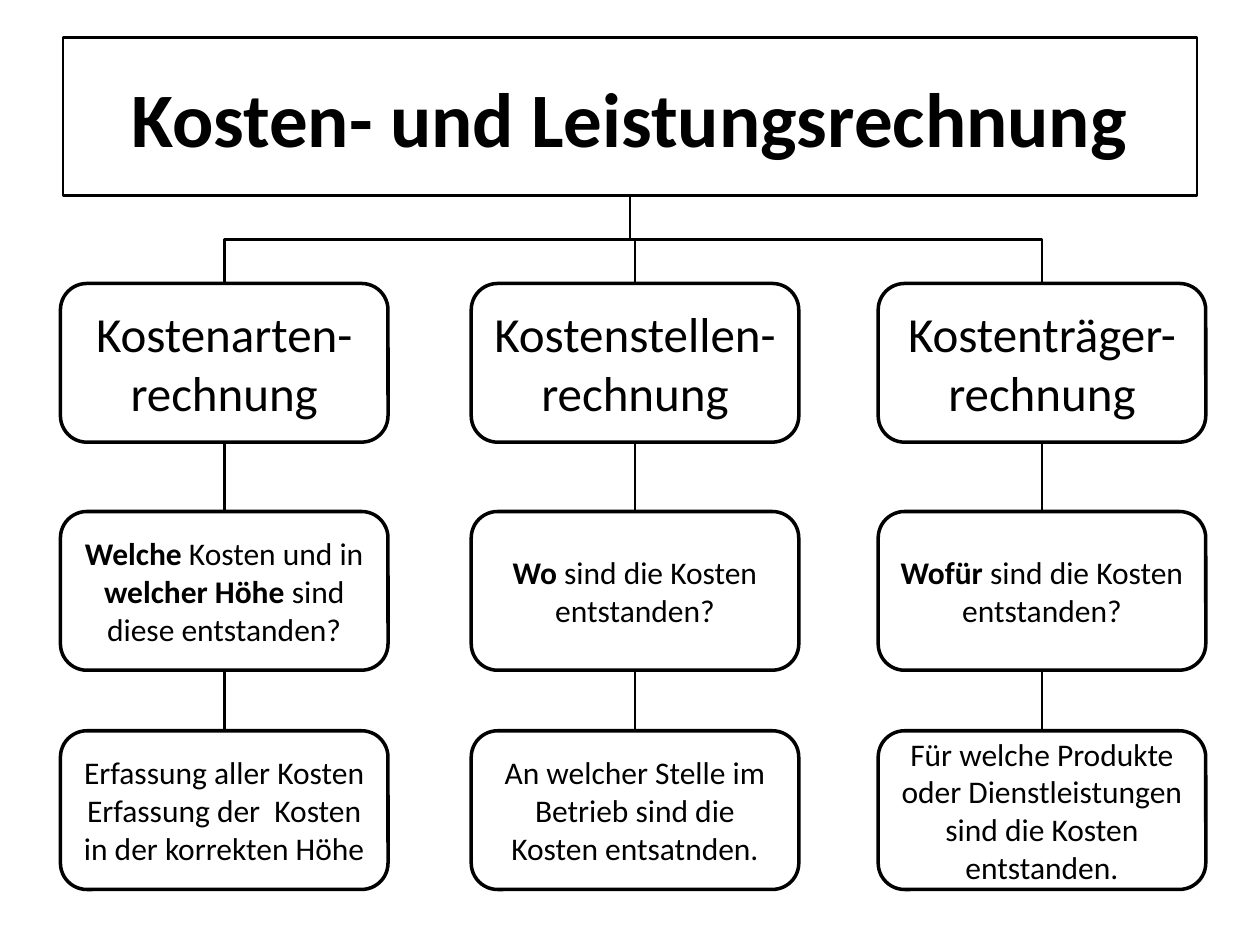
from dataclasses import dataclass
from itertools import pairwise

from pptx import Presentation
from pptx import util as u
from pptx.dml.color import RGBColor
from pptx.enum import shapes, text
from pptx.oxml.ns import qn
from lxml import etree


@dataclass(frozen=True)
class Theme:
    font: str = "Calibri"
    ink: RGBColor = RGBColor(0, 0, 0)
    paper: RGBColor = RGBColor(255, 255, 255)
    title: int = 44
    heading: int = 28
    body: int = 18
    box_line: float = 2
    thin_line: float = 1.5


THEME = Theme()
TOP, LEFT, BOTTOM, RIGHT = 0, 1, 2, 3

BOX_W, BOX_H = 2.6, 1.26
COLUMN_X = (0.48, 3.74, 6.97)
ROW_Y = (2.25, 4.06, 5.8)
ROW_SIZES = (THEME.heading, THEME.body, THEME.body)

# One list per column; \v breaks a line, \n a paragraph, * encloses bold words
COLUMNS = (
    ("Kostenarten-\vrechnung",
     "*Welche* Kosten und in *welcher Höhe *sind diese entstanden?",
     "Erfassung aller Kosten\nErfassung der  Kosten in der korrekten Höhe"),
    ("Kostenstellen-\vrechnung",
     "*Wo* sind die Kosten entstanden?",
     "An welcher Stelle im Betrieb sind die Kosten entsatnden."),
    ("Kostenträger-\vrechnung",
     "*Wofür* sind die Kosten entstanden?",
     "Für welche Produkte oder Dienstleistungen sind die Kosten entstanden."),
)


def write_text(tf, content, size):
    tf.word_wrap = True
    tf.vertical_anchor = text.MSO_ANCHOR.MIDDLE
    if "*" in content:
        for i, piece in enumerate(content.split("*")):
            if piece:
                r = tf.paragraphs[0].add_run()
                r.text = piece
                r.font.bold = i % 2 == 1
    else:
        tf.text = content
    for p in tf.paragraphs:
        p.alignment = text.PP_ALIGN.CENTER
        for r in p.runs:
            r.font.name = THEME.font
            r.font.size = u.Pt(size)
            r.font.color.rgb = THEME.ink


def add_box(s, kind, x, y, w, h, content, size, line):
    sp = s.shapes.add_shape(kind, *map(u.Inches, (x, y, w, h)))
    sp.shadow.inherit = False
    sp.fill.solid()
    sp.fill.fore_color.rgb = THEME.paper
    sp.line.color.rgb = THEME.ink
    sp.line.width = u.Pt(line)
    write_text(sp.text_frame, content, size)
    return sp


def add_link(s, kind, upper, lower):
    """Join the bottom of one box to the top of the next."""
    cxn = s.shapes.add_connector(kind, 0, 0, 0, 0)
    cxn.begin_connect(upper, BOTTOM)
    cxn.end_connect(lower, TOP)
    cxn.line.color.rgb = THEME.ink
    cxn.line.width = u.Pt(THEME.thin_line)
    etree.SubElement(cxn._element.spPr, qn("a:effectLst"))
    return cxn


def add_branch(s, upper, lower):
    """Elbow that leaves downwards: the frame is turned by a quarter."""
    cxn = add_link(s, shapes.MSO_CONNECTOR.ELBOW, upper, lower)
    goes_left = cxn.end_x < cxn.begin_x
    mid_x = (cxn.begin_x + cxn.end_x) // 2
    mid_y = (cxn.begin_y + cxn.end_y) // 2
    w, h = cxn.height, cxn.width
    cxn.left, cxn.top = mid_x - w // 2, mid_y - h // 2
    cxn.width, cxn.height = w, h
    xfrm = cxn._element.spPr.find(qn("a:xfrm"))
    for flip in ("flipH", "flipV"):
        xfrm.attrib.pop(flip, None)
    xfrm.set("rot", str((90 if goes_left else 270) * 60000))
    if not goes_left:
        xfrm.set("flipH", "1")


def main():
    prs = Presentation()
    prs.slide_width, prs.slide_height = u.Inches(10), u.Inches(7.5)
    s = prs.slides.add_slide(prs.slide_layouts[6])

    # Title
    title = add_box(s, shapes.MSO_SHAPE.RECTANGLE, 0.5, 0.3, 9, 1.25,
                    "Kosten- und Leistungsrechnung", THEME.title, THEME.thin_line)
    title.text_frame.paragraphs[0].runs[0].font.bold = True

    # Columns of boxes, each hung from the title
    for x, contents in zip(COLUMN_X, COLUMNS):
        boxes = [add_box(s, shapes.MSO_SHAPE.ROUNDED_RECTANGLE, x, y, BOX_W, BOX_H,
                         content, size, THEME.box_line)
                 for y, content, size in zip(ROW_Y, contents, ROW_SIZES)]
        add_branch(s, title, boxes[0])
        for upper, lower in pairwise(boxes):
            add_link(s, shapes.MSO_CONNECTOR.STRAIGHT, upper, lower)

    prs.save("out.pptx")


if __name__ == "__main__":
    main()
